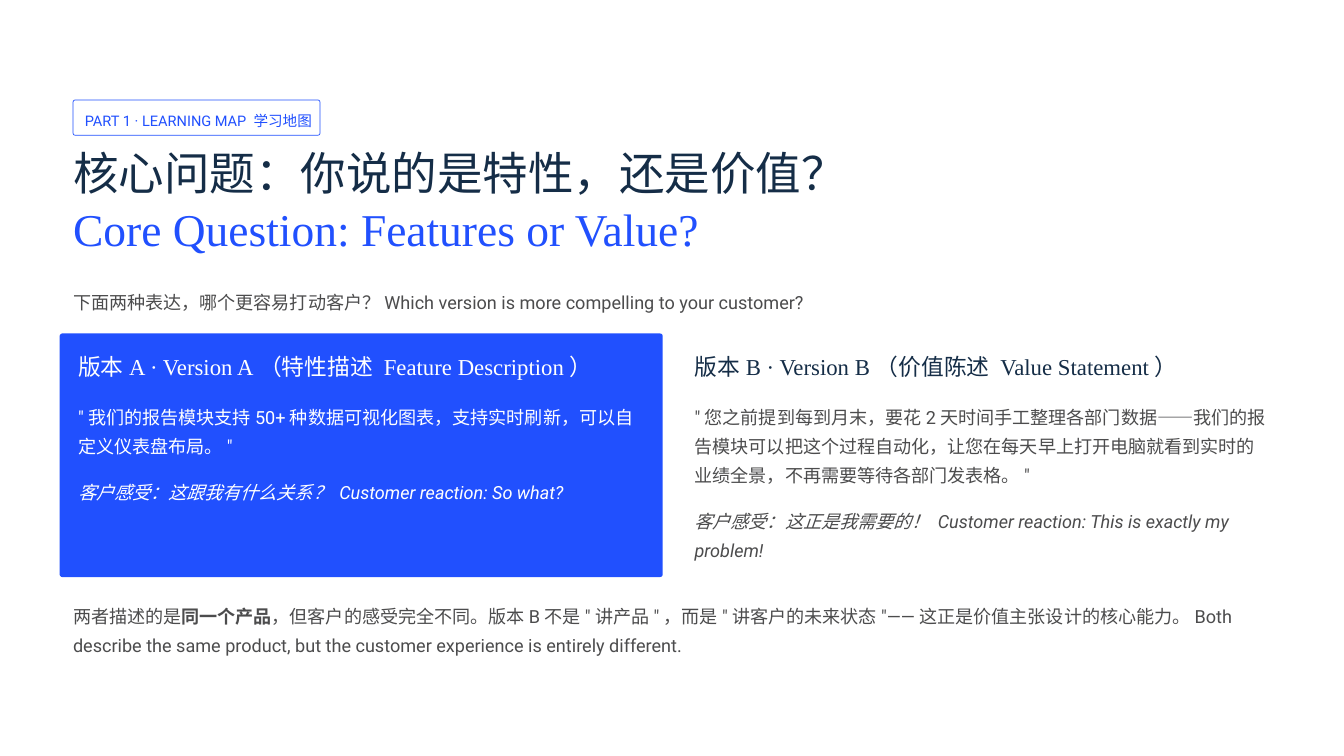
from pptx import Presentation
from pptx.dml.color import RGBColor
from pptx.enum.shapes import MSO_SHAPE
from pptx.enum.text import MSO_ANCHOR, MSO_AUTO_SIZE, PP_ALIGN
from pptx.util import Inches, Pt

ROUNDED = MSO_SHAPE.ROUNDED_RECTANGLE
TOP = MSO_ANCHOR.TOP
LEFT = PP_ALIGN.LEFT
FIXED = MSO_AUTO_SIZE.NONE

COLORS = {"blue": "2150FE", "navy": "152D47", "gray": "4C4C4D", "white": "FFFFFF"}
SANS, SERIF = "Roboto", "Times New Roman"

TAG = "PART 1 · LEARNING MAP 学习地图"
TITLE = [
    [("核心问题：你说的是特性，还是价值？", {"color": "navy"})],
    [("Core Question: Features or Value?", {"color": "blue"})],
]
QUESTION = "下面两种表达，哪个更容易打动客户？Which version is more compelling to your customer?"
VERSIONS = [
    {
        "heading": "版本A · Version A（特性描述 Feature Description）",
        "quote": "\"我们的报告模块支持50+种数据可视化图表，支持实时刷新，可以自定义仪表盘布局。\"",
        "reaction": "客户感受：这跟我有什么关系？ Customer reaction: So what?",
        "left": 0.93, "width": 6.75, "heading_width": 5.84,
        "quote_lines": 2, "reaction_lines": 1,
        "heading_color": "white", "body_color": "white",
    },
    {
        "heading": "版本B · Version B（价值陈述 Value Statement）",
        "quote": "\"您之前提到每到月末，要花2天时间手工整理各部门数据——我们的报告模块可以把这个过程自动化，"
                 "让您在每天早上打开电脑就看到实时的业绩全景，不再需要等待各部门发表格。\"",
        "reaction": "客户感受：这正是我需要的！ Customer reaction: This is exactly my problem!",
        "left": 8.27, "width": 6.87, "heading_width": 5.45,
        "quote_lines": 3, "reaction_lines": 2,
        "heading_color": "navy", "body_color": "gray",
    },
]
SUMMARY = [[
    ("两者描述的是", {}),
    ("同一个产品", {"bold": True}),
    ("，但客户的感受完全不同。版本B不是\"讲产品\"，而是\"讲客户的未来状态\"——这正是价值主张设计的核心能力。"
     "Both describe the same product, but the customer experience is entirely different.", {}),
]]

PAGE_WIDTH, PAGE_HEIGHT = 16, 9
MARGIN = 0.87
CONTENT_WIDTH = PAGE_WIDTH - 2 * MARGIN
LINE = 25 / 72
HEADING_TOP, QUOTE_TOP, REACTION_GAP = 4.19, 4.75, 0.195


def color(name):
    return RGBColor.from_string(COLORS[name])


def place(shape, left, top, width, height):
    shape.left, shape.top = Inches(left), Inches(top)
    shape.width, shape.height = Inches(width), Inches(height)


def write(box, text, size=15.5, font=SANS, ink="gray", spacing=25, italic=False, wrap=True):
    frame = box.text_frame
    frame.margin_left = frame.margin_right = frame.margin_top = frame.margin_bottom = 0
    frame.auto_size = FIXED
    frame.word_wrap = wrap
    frame.vertical_anchor = TOP
    paragraphs = [[(text, {})]] if isinstance(text, str) else text
    for index, spans in enumerate(paragraphs):
        para = frame.add_paragraph() if index else frame.paragraphs[0]
        para.alignment = LEFT
        para.line_spacing = Pt(spacing)
        for words, style in spans:
            span = para.add_run()
            span.text = words
            span.font.name = font
            span.font.size = Pt(size)
            span.font.bold = style.get("bold", False)
            span.font.italic = italic
            span.font.color.rgb = color(style.get("color", ink))


def add_text(page, area, text, **style):
    box = page.shapes.add_textbox(*(Inches(length) for length in area))
    write(box, text, **style)


def add_panel(page, area, radius, fill=None, line=None):
    panel = page.shapes.add_shape(ROUNDED, *(Inches(length) for length in area))
    panel.adjustments[0] = radius
    panel.shadow.inherit = False
    if fill:
        panel.fill.solid()
        panel.fill.fore_color.rgb = color(fill)
    else:
        panel.fill.background()
    if line:
        panel.line.color.rgb = color(line)
        panel.line.width = Pt(0.6)
    else:
        panel.line.fill.background()


def add_version(page, version):
    left, width = version["left"], version["width"]
    quote_height = version["quote_lines"] * LINE
    reaction_height = version["reaction_lines"] * LINE
    reaction_top = QUOTE_TOP + quote_height + REACTION_GAP
    add_text(page, (left, HEADING_TOP, version["heading_width"], 0.34), version["heading"],
             size=19.5, font=SERIF, ink=version["heading_color"], spacing=24, wrap=False)
    add_text(page, (left, QUOTE_TOP, width, quote_height), version["quote"],
             ink=version["body_color"])
    add_text(page, (left, reaction_top, width, reaction_height), version["reaction"],
             ink=version["body_color"], italic=True)


def main():
    deck = Presentation()
    deck.slide_width, deck.slide_height = Inches(PAGE_WIDTH), Inches(PAGE_HEIGHT)
    page = deck.slides.add_slide(deck.slide_layouts.get_by_name("Title Only"))
    page.background.fill.solid()
    page.background.fill.fore_color.rgb = color("white")

    add_panel(page, (MARGIN, 1.19, 2.94, 0.42), 0.061, line="blue")
    add_text(page, (1.01, 1.26, 2.66, 0.28), TAG, size=12.5, ink="blue", spacing=20, wrap=False)

    title = page.shapes.title
    place(title, MARGIN, 1.7, 9.22, 1.36)
    write(title, TITLE, size=39, font=SERIF, spacing=48.5)

    add_text(page, (MARGIN, 3.38, CONTENT_WIDTH, LINE), QUESTION, wrap=False)
    add_panel(page, (0.71, 3.97, 7.18, 2.9), 0.011, fill="blue")
    for version in VERSIONS:
        add_version(page, version)
    add_text(page, (MARGIN, 7.12, CONTENT_WIDTH, 2 * LINE), SUMMARY)

    deck.save("out.pptx")


if __name__ == "__main__":
    main()
